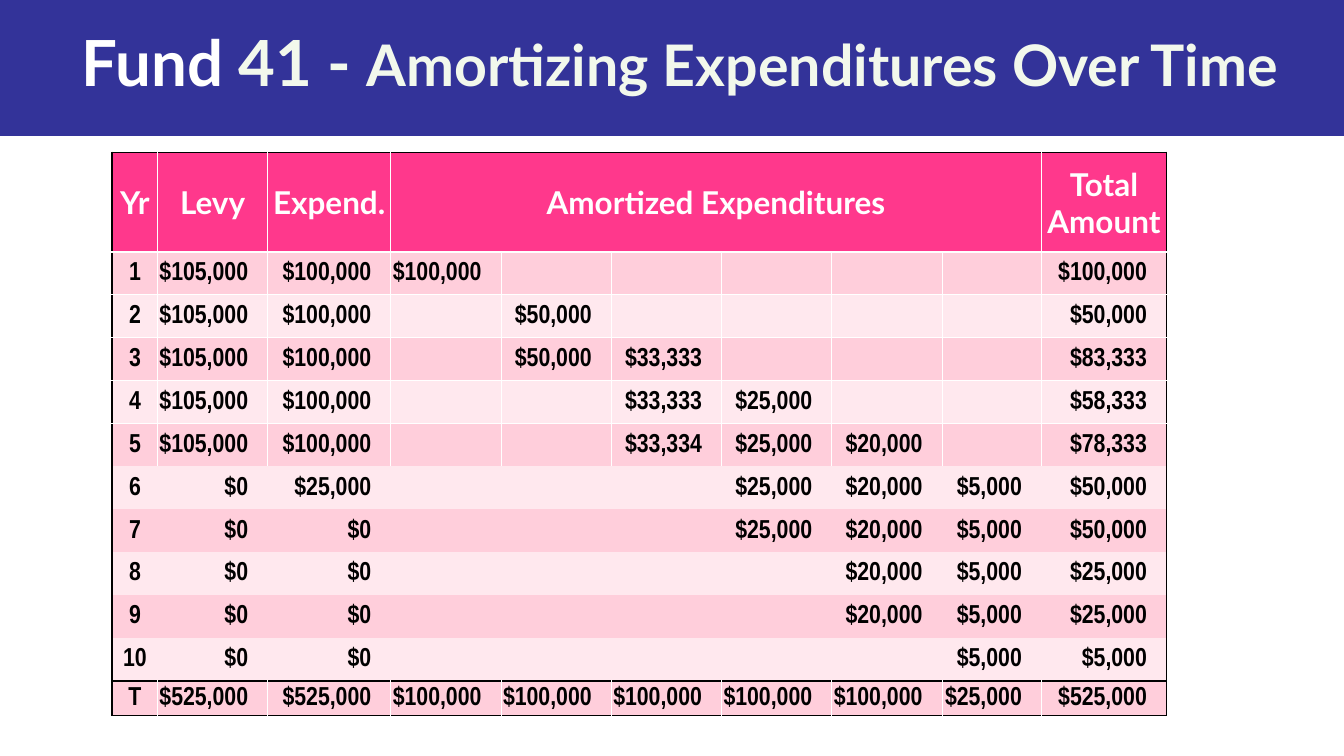
from pptx import Presentation
from pptx.dml.color import RGBColor
from pptx.enum.shapes import MSO_SHAPE as SHAPE
from pptx.enum.text import MSO_ANCHOR as ANCHOR, PP_ALIGN as ALIGN
from pptx.oxml.ns import qn
from pptx.util import Inches, Pt
from lxml.etree import SubElement as Sub

HEADS = {0: "Yr", 1: "Levy", 2: "Expend.", 3: "Amortized Expenditures", 9: "Total Amount"}
NA = None
YEARS = [
    [105000, 100000, 100000, NA, NA, NA, NA, NA, 100000],
    [105000, 100000, NA, 50000, NA, NA, NA, NA, 50000],
    [105000, 100000, NA, 50000, 33333, NA, NA, NA, 83333],
    [105000, 100000, NA, NA, 33333, 25000, NA, NA, 58333],
    [105000, 100000, NA, NA, 33334, 25000, 20000, NA, 78333],
    [0, 25000, NA, NA, NA, 25000, 20000, 5000, 50000],
    [0, 0, NA, NA, NA, 25000, 20000, 5000, 50000],
    [0, 0, NA, NA, NA, NA, 20000, 5000, 25000],
    [0, 0, NA, NA, NA, NA, 20000, 5000, 25000],
    [0, 0, NA, NA, NA, NA, NA, 5000, 5000],
    [525000, 525000, 100000, 100000, 100000, 100000, 100000, 25000, 525000],
]
WIDTHS = [0.46, 1.12, 1.25] + [1.12] * 5 + [1.01, 1.27]
HEAD_H, TOTAL_H = 1.01, 0.35

EDGE, RULE = ("000000", 1.5), ("000000", 1)
THICK, THIN = ("FFFFFF", 1.5), ("FFFFFF", 1)
LEVELS = [EDGE, THICK] + [THIN] * 4 + [NA] * 5 + [RULE, EDGE]
INNER = [THIN] * 6 + [NA] * 5 + [THIN]

HEAD = {"size": Pt(23), "name": "Lato", "bold": True, "color": "FFFFFF"}
BODY = {"size": Pt(19), "name": "Arial Narrow", "bold": True, "color": "000000"}


def paint(hue):
    """Turn a hex string into a colour."""
    return RGBColor.from_string(hue)


def style(font, form):
    """Set the font from a dict of format values."""
    for key, val in form.items():
        if key == "color":
            font.color.rgb = paint(val)
        else:
            setattr(font, key, val)


def border(cell, sides):
    """Draw the left, right, top and bottom lines of a cell."""
    props = cell._tc.get_or_add_tcPr()
    for side, line in zip("LRTB", sides):
        node = Sub(props, qn(f"a:ln{side}"))
        if line:
            hue, width = line
            node.set("w", str(Pt(width)))
            Sub(Sub(node, qn("a:solidFill")), qn("a:srgbClr")).set("val", hue)
        else:
            Sub(node, qn("a:noFill"))


def fill_cell(cell, text, form, align, right, hue):
    """Write one cell and colour it."""
    looks = {"vertical_anchor": ANCHOR.MIDDLE, "margin_left": Inches(0.01),
             "margin_top": Inches(0.01), "margin_right": Inches(right), "margin_bottom": 0}
    for key, val in looks.items():
        setattr(cell, key, val)
    cell.fill.solid()
    cell.fill.fore_color.rgb = paint(hue)
    para = cell.text_frame.paragraphs[0]
    para.alignment = align
    if text:
        run = para.add_run()
        run.text = text
        style(run.font, form)
    else:
        style(para.font, form)


def add_title(slide, x, y, w, h):
    """Place the blue band and its title."""
    band = slide.shapes.add_shape(SHAPE.RECTANGLE, *map(Inches, (x, y, w, h)))
    band.shadow.inherit = False
    band.fill.solid()
    band.fill.fore_color.rgb = paint("333399")
    band.line.fill.background()
    frame = slide.shapes.add_textbox(*map(Inches, (x, y, w, h))).text_frame
    frame.word_wrap = True
    frame.vertical_anchor = ANCHOR.MIDDLE
    para = frame.paragraphs[0]
    para.alignment = ALIGN.CENTER
    para.line_spacing = 0.8
    para.space_after = Pt(41)
    for text, size, hue in [(" Fund ", 46.5, "FFFFFF"), ("41 - ", 46.5, "F2F8EC"),
                            ("Amortizing Expenditures Over Time", 41.9, "F2F8EC")]:
        run = para.add_run()
        run.text = text
        style(run.font, {**HEAD, "size": Pt(size), "color": hue})


def add_grid(slide, x, y, w, h):
    """Place the table of levies and amortized amounts."""
    rows, cols = len(YEARS) + 1, len(WIDTHS)
    grid = slide.shapes.add_table(rows, cols, *map(Inches, (x, y, w, h))).table
    step = (h - HEAD_H - TOTAL_H) / (rows - 2)
    for col, width in zip(grid.columns, WIDTHS):
        col.width = Inches(width)
    for row, high in zip(grid.rows, [HEAD_H] + [step] * (rows - 2) + [TOTAL_H]):
        row.height = Inches(high)
    grid.cell(0, 3).merge(grid.cell(0, 8))
    for r in range(rows):
        posts = [EDGE] + [INNER[r]] * (cols - 1) + [EDGE]
        for c in range(cols):
            cell = grid.cell(r, c)
            border(cell, (posts[c], posts[c + 1], LEVELS[r], LEVELS[r + 1]))
            if r == 0:
                fill_cell(cell, HEADS.get(c), HEAD, ALIGN.CENTER, 0.01, "FF388C")
                continue
            hue = "FFCEDB" if r % 2 else "FFE8EE"
            if c == 0:
                label = "T" if r == rows - 1 else str(r)
                fill_cell(cell, label, BODY, ALIGN.CENTER, 0.01, hue)
            else:
                sum_ = YEARS[r - 1][c - 1]
                text = "" if sum_ is NA else f"${sum_:,} "
                fill_cell(cell, text, BODY, ALIGN.RIGHT, 0.14, hue)


def main():
    """Build and save the slide."""
    deck = Presentation()
    deck.slide_width, deck.slide_height = Inches(13.65), Inches(7.68)
    slide = deck.slides.add_slide(deck.slide_layouts[6])
    add_title(slide, 0, 0, 13.65, 1.38)
    add_grid(slide, 1.14, 1.55, sum(WIDTHS), 5.72)
    deck.save("out.pptx")


if __name__ == "__main__":
    main()
